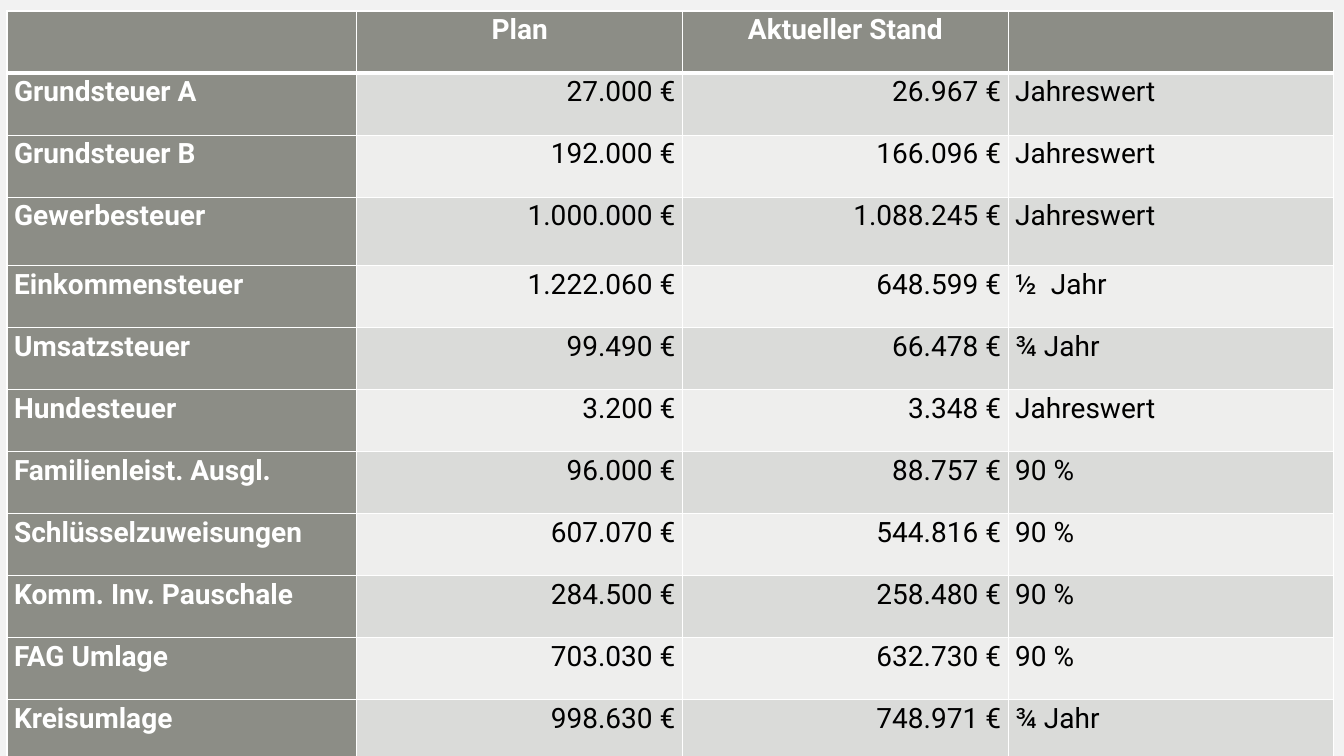
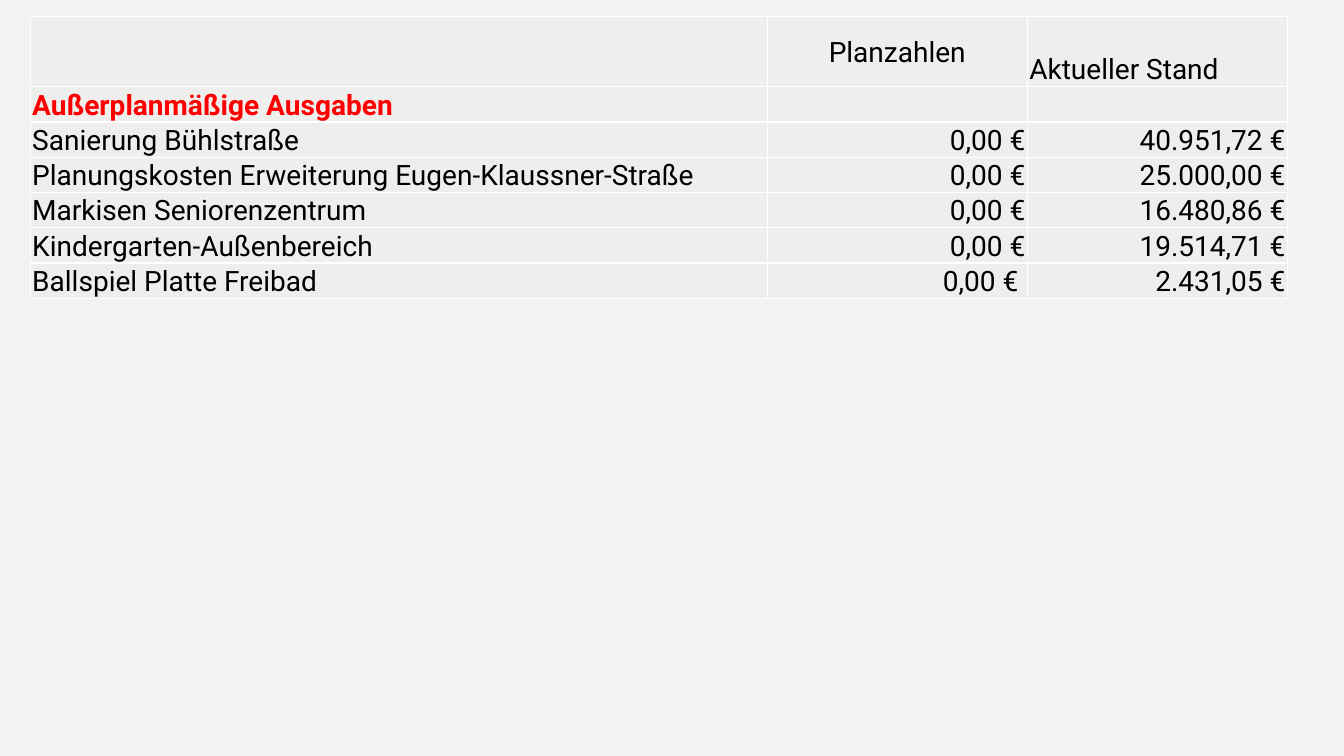
from dataclasses import dataclass, field

from lxml import etree
from pptx import Presentation
from pptx.dml.color import RGBColor
from pptx.enum.text import MSO_ANCHOR, PP_ALIGN
from pptx.oxml.ns import qn
from pptx.presentation import Presentation as Deck
from pptx.table import _Cell
from pptx.util import Inches, Pt

LEFT, CENTER, RIGHT, JUSTIFY = PP_ALIGN.LEFT, PP_ALIGN.CENTER, PP_ALIGN.RIGHT, PP_ALIGN.JUSTIFY
TOP, MIDDLE, BOTTOM = MSO_ANCHOR.TOP, MSO_ANCHOR.MIDDLE, MSO_ANCHOR.BOTTOM

SLIDE_WIDTH, SLIDE_HEIGHT = 13.33, 7.5
BLANK_LAYOUT = 6


@dataclass(frozen=True)
class Theme:
    background: str = "F2F2F2"
    heading: str = "8C8D86"
    band_dark: str = "DADBD9"
    band_light: str = "EEEEED"
    border: str = "FFFFFF"
    light_text: str = "FFFFFF"
    dark_text: str = "000000"
    alert_text: str = "FF0000"
    font: str = "Roboto"
    text_size: int = 20
    line_spacing: float = 1.07
    thin_line: int = 1
    thick_line: int = 3


THEME = Theme()


@dataclass(frozen=True)
class CellStyle:
    fill: str = THEME.band_light
    color: str = THEME.dark_text
    bold: bool = False
    align: PP_ALIGN = LEFT
    anchor: MSO_ANCHOR = TOP
    inset: float = 0.02
    extra_right: float = 0
    line_above: int = THEME.thin_line
    line_below: int = THEME.thin_line


@dataclass(frozen=True)
class Entry:
    text: str
    style: CellStyle = field(default_factory=CellStyle)


@dataclass(frozen=True)
class Grid:
    left: float
    top: float
    columns: list[float]
    rows: list[float]
    entries: list[list[Entry]]


REVENUE_HEADINGS = ["", "Plan", "Aktueller Stand", ""]
REVENUES = [
    ["Grundsteuer A", "27.000 €", "26.967 €", "Jahreswert"],
    ["Grundsteuer B", "192.000 €", "166.096 €", "Jahreswert"],
    ["Gewerbesteuer", "1.000.000 €", "1.088.245 €", "Jahreswert"],
    ["Einkommensteuer", "1.222.060 €", "648.599 €", "½  Jahr"],
    ["Umsatzsteuer", "99.490 €", "66.478 €", "¾ Jahr"],
    ["Hundesteuer", "3.200 €", "3.348 €", "Jahreswert"],
    ["Familienleist. Ausgl.", "96.000 €", "88.757 €", "90 %"],
    ["Schlüsselzuweisungen", "607.070 €", "544.816 €", "90 %"],
    ["Komm. Inv. Pauschale", "284.500 €", "258.480 €", "90 %"],
    ["FAG Umlage", "703.030 €", "632.730 €", "90 %"],
    ["Kreisumlage", "998.630 €", "748.971 €", "¾ Jahr"],
]
EXPENSE_HEADINGS = ["", "Planzahlen", "Aktueller Stand"]
EXPENSE_GROUP = "Außerplanmäßige Ausgaben"
EXPENSES = [
    ["Sanierung Bühlstraße", "0,00 €", "40.951,72 €"],
    ["Planungskosten Erweiterung Eugen-Klaussner-Straße", "0,00 €", "25.000,00 €"],
    ["Markisen Seniorenzentrum", "0,00 €", "16.480,86 €"],
    ["Kindergarten-Außenbereich", "0,00 €", "19.514,71 €"],
    ["Ballspiel Platte Freibad", "0,00 €", "2.431,05 €"],
]


def draw_borders(cell: _Cell, style: CellStyle) -> None:
    properties = cell._tc.get_or_add_tcPr()
    widths = {
        "a:lnL": THEME.thin_line,
        "a:lnR": THEME.thin_line,
        "a:lnT": style.line_above,
        "a:lnB": style.line_below,
    }
    for tag, width in widths.items():
        line = etree.SubElement(properties, qn(tag), w=str(Pt(width)))
        solid = etree.SubElement(line, qn("a:solidFill"))
        etree.SubElement(solid, qn("a:srgbClr"), val=THEME.border)


def fill_cell(cell: _Cell, entry: Entry) -> None:
    style = entry.style
    draw_borders(cell, style)
    cell.fill.solid()
    cell.fill.fore_color.rgb = RGBColor.from_string(style.fill)
    cell_format = {
        "margin_left": Inches(style.inset),
        "margin_right": Inches(style.inset + style.extra_right),
        "margin_top": 0,
        "margin_bottom": 0,
        "vertical_anchor": style.anchor,
    }
    for name, value in cell_format.items():
        setattr(cell, name, value)
    if not entry.text:
        return
    paragraph = cell.text_frame.paragraphs[0]
    paragraph.alignment = style.align
    paragraph.line_spacing = THEME.line_spacing
    run = paragraph.add_run()
    run.text = entry.text
    font_format = {"name": THEME.font, "size": Pt(THEME.text_size), "bold": style.bold}
    for name, value in font_format.items():
        setattr(run.font, name, value)
    run.font.color.rgb = RGBColor.from_string(style.color)


def draw_grid(deck: Deck, grid: Grid) -> None:
    slide = deck.slides.add_slide(deck.slide_layouts[BLANK_LAYOUT])
    table = slide.shapes.add_table(
        len(grid.rows), len(grid.columns),
        Inches(grid.left), Inches(grid.top),
        Inches(sum(grid.columns)), Inches(sum(grid.rows)),
    ).table
    table.first_row = False
    table.horz_banding = False
    for column, width in zip(table.columns, grid.columns):
        column.width = Inches(width)
    for row, height, entries in zip(table.rows, grid.rows, grid.entries):
        row.height = Inches(height)
        for cell, entry in zip(row.cells, entries):
            fill_cell(cell, entry)


def revenue_grid() -> Grid:
    inset = 0.07
    heading = CellStyle(THEME.heading, THEME.light_text, True, CENTER,
                        inset=inset, line_below=THEME.thick_line)
    entries = [[Entry(text, heading) for text in REVENUE_HEADINGS]]
    for index, (tax, *values) in enumerate(REVENUES):
        band = THEME.band_light if index % 2 else THEME.band_dark
        above = THEME.thin_line if index else THEME.thick_line
        label = CellStyle(THEME.heading, THEME.light_text, True, JUSTIFY,
                          inset=inset, line_above=above)
        entries.append([Entry(tax, label)] + [
            Entry(text, CellStyle(band, align=align, inset=inset, line_above=above))
            for text, align in zip(values, (RIGHT, RIGHT, JUSTIFY))
        ])
    total_height, trade_tax_height = 7.45, 0.68
    rows = [(total_height - trade_tax_height) / len(REVENUES)] * len(entries)
    rows[3] = trade_tax_height
    return Grid(0.07, 0.11, [3.47] + [3.23] * 3, rows, entries)


def expense_grid() -> Grid:
    heading_styles = [
        CellStyle(),
        CellStyle(align=CENTER, anchor=MIDDLE),
        CellStyle(anchor=BOTTOM),
    ]
    group = CellStyle(color=THEME.alert_text, bold=True, anchor=MIDDLE)
    entries = [
        [Entry(text, style) for text, style in zip(EXPENSE_HEADINGS, heading_styles)],
        [Entry(EXPENSE_GROUP, group), Entry(""), Entry("")],
    ]
    for index, (project, planned, current) in enumerate(EXPENSES, 1):
        shift = 0.07 if index == len(EXPENSES) else 0
        entries.append([
            Entry(project, CellStyle(anchor=MIDDLE)),
            Entry(planned, CellStyle(align=RIGHT, anchor=MIDDLE, extra_right=shift)),
            Entry(current, CellStyle(align=RIGHT)),
        ])
    line = 0.35
    rows = [2 * line] + [line] * (len(entries) - 1)
    return Grid(0.3, 0.16, [7.31, 2.58, 2.58], rows, entries)


def main() -> None:
    deck = Presentation()
    deck.slide_width = Inches(SLIDE_WIDTH)
    deck.slide_height = Inches(SLIDE_HEIGHT)
    backdrop = deck.slide_master.background.fill
    backdrop.solid()
    backdrop.fore_color.rgb = RGBColor.from_string(THEME.background)
    for grid in (revenue_grid(), expense_grid()):
        draw_grid(deck, grid)
    deck.save("out.pptx")


if __name__ == "__main__":
    main()
